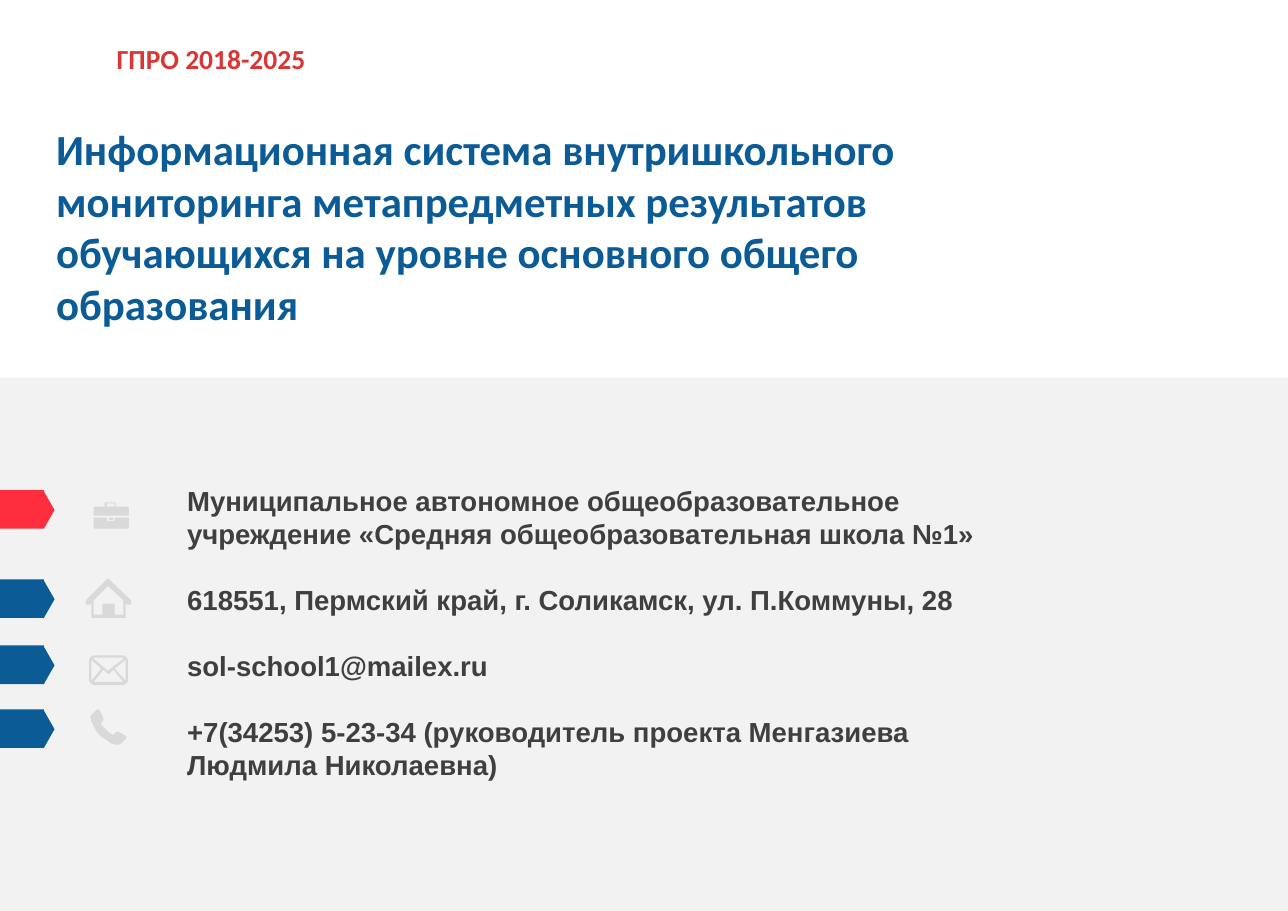
from pptx import Presentation
from pptx.dml.color import RGBColor
from pptx.enum.shapes import MSO_SHAPE
from pptx.enum.text import MSO_ANCHOR
from pptx.util import Pt

PX = 9144  # 100 px to the inch
RECTANGLE = MSO_SHAPE.RECTANGLE
TRIANGLE = MSO_SHAPE.ISOSCELES_TRIANGLE
MIDDLE = MSO_ANCHOR.MIDDLE
RED, BLUE, ICON_GREY = "FE2E3E", "0B5B97", "D9D9D9"

presentation = Presentation()
presentation.slide_width = 1169 * PX
presentation.slide_height = 827 * PX
slide = presentation.slides.add_slide(presentation.slide_layouts[6])


def paint(shape, color):
    """Give the shape a flat fill with no line or shadow."""
    shape.shadow.inherit = False
    shape.fill.solid()
    shape.fill.fore_color.rgb = RGBColor.from_string(color)
    shape.line.fill.background()


def add_text(box, paragraphs, font_name, size, color, wrap=True):
    """Add a bold text box and return its frame."""
    frame = slide.shapes.add_textbox(*[value * PX for value in box]).text_frame
    frame.word_wrap = wrap
    frame.text = "\n".join(paragraphs)
    for paragraph in frame.paragraphs:
        font = paragraph.runs[0].font
        font.name, font.size, font.bold = font_name, Pt(size), True
        font.color.rgb = RGBColor.from_string(color)
    return frame


# Heading
add_text((96, 33, 192, 40), ["ГПРО 2018-2025"], "Calibri", 18, "D93635", wrap=False)
panel = slide.shapes.add_shape(RECTANGLE, 0, 343 * PX, 1169 * PX, 484 * PX)
paint(panel, "F2F2F2")
title = add_text(
    (20, 91, 866, 228),
    ["Информационная система внутришкольного мониторинга метапредметных "
     "результатов обучающихся на уровне основного общего образования"],
    "Calibri", 28, BLUE)
title.vertical_anchor = MIDDLE
title.margin_left = title.margin_right = 11 * PX
title_properties = title.paragraphs[0]._p.get_or_add_pPr()
title_properties.set("marL", str(20 * PX))
title_properties.set("indent", "0")

# Contact details
contacts = add_text(
    (160, 434, 768, 283),
    ["Муниципальное автономное общеобразовательное учреждение "
     "«Средняя общеобразовательная школа №1»",
     "618551, Пермский край, г. Соликамск, ул. П.Коммуны, 28",
     "sol-school1@mailex.ru",
     "+7(34253) 5-23-34 (руководитель проекта Менгазиева Людмила Николаевна)"],
    "Arial", 18, "3F3F3F")
for paragraph in contacts.paragraphs[1:]:
    paragraph.space_before = Pt(21.6)

# Arrow tabs on the left edge
for top, color in [(445, RED), (526, BLUE), (586, BLUE), (644, BLUE)]:
    tab = slide.shapes.add_shape(RECTANGLE, 0, top * PX, 40 * PX, 35 * PX)
    tip = slide.shapes.add_shape(TRIANGLE, 27 * PX, (top + 13) * PX, 35 * PX, 10 * PX)
    tip.rotation = 90
    paint(tab, color)
    paint(tip, color)

# Icons: each is a list of contours, inner contours are holes
briefcase_base = [
    [(104, 473), (97, 473), (97, 470), (85, 470), (85, 479), (86, 480),
     (116, 480), (117, 479), (117, 470), (104, 470)],
]
briefcase_top = [
    [(116, 460), (105, 460), (105, 456), (95, 456), (95, 460), (86, 460),
     (85, 461), (85, 468), (117, 468), (117, 461)],
    [(97, 460), (97, 457), (104, 457), (104, 460)],
]
house = [
    [(119, 545), (98, 525), (78, 545), (78, 549), (81, 549), (83, 548),
     (83, 561), (114, 561), (114, 548), (116, 549), (119, 549)],
    [(112, 558), (104, 558), (104, 548), (93, 548), (93, 558), (85, 558),
     (85, 545), (98, 532), (112, 545)],
]
phone = [
    [(115, 669), (114, 671), (110, 675), (108, 676), (105, 676), (101, 675),
     (97, 672), (91, 668), (87, 663), (85, 659), (83, 655), (82, 651),
     (83, 649), (88, 644), (90, 644), (94, 652), (94, 654), (92, 656),
     (92, 658), (94, 660), (96, 662), (99, 665), (102, 667), (103, 667),
     (105, 665), (107, 664), (114, 668)],
]
envelope = [
    [(112, 595), (85, 595), (83, 596), (82, 597), (81, 599), (81, 618),
     (82, 620), (83, 621), (85, 622), (112, 622), (114, 621), (115, 620),
     (116, 618), (116, 599), (115, 597), (114, 596)],
    [(104, 607), (114, 599), (114, 618)],
    [(112, 597), (112, 598), (98, 609), (85, 598), (85, 597)],
    [(83, 618), (83, 599), (92, 607)],
    [(85, 619), (94, 608), (98, 612), (99, 612), (103, 608), (112, 619)],
]
for icon in [briefcase_base, briefcase_top, house, phone, envelope]:
    builder = slide.shapes.build_freeform(*icon[0][0], scale=PX)
    builder.add_line_segments(icon[0][1:], close=True)
    for hole in icon[1:]:
        builder.move_to(*hole[0])
        builder.add_line_segments(hole[1:], close=True)
    paint(builder.convert_to_shape(), ICON_GREY)
clasp = slide.shapes.add_shape(RECTANGLE, 99 * PX, 470 * PX, 4 * PX, 2 * PX)
paint(clasp, ICON_GREY)

presentation.save("out.pptx")
